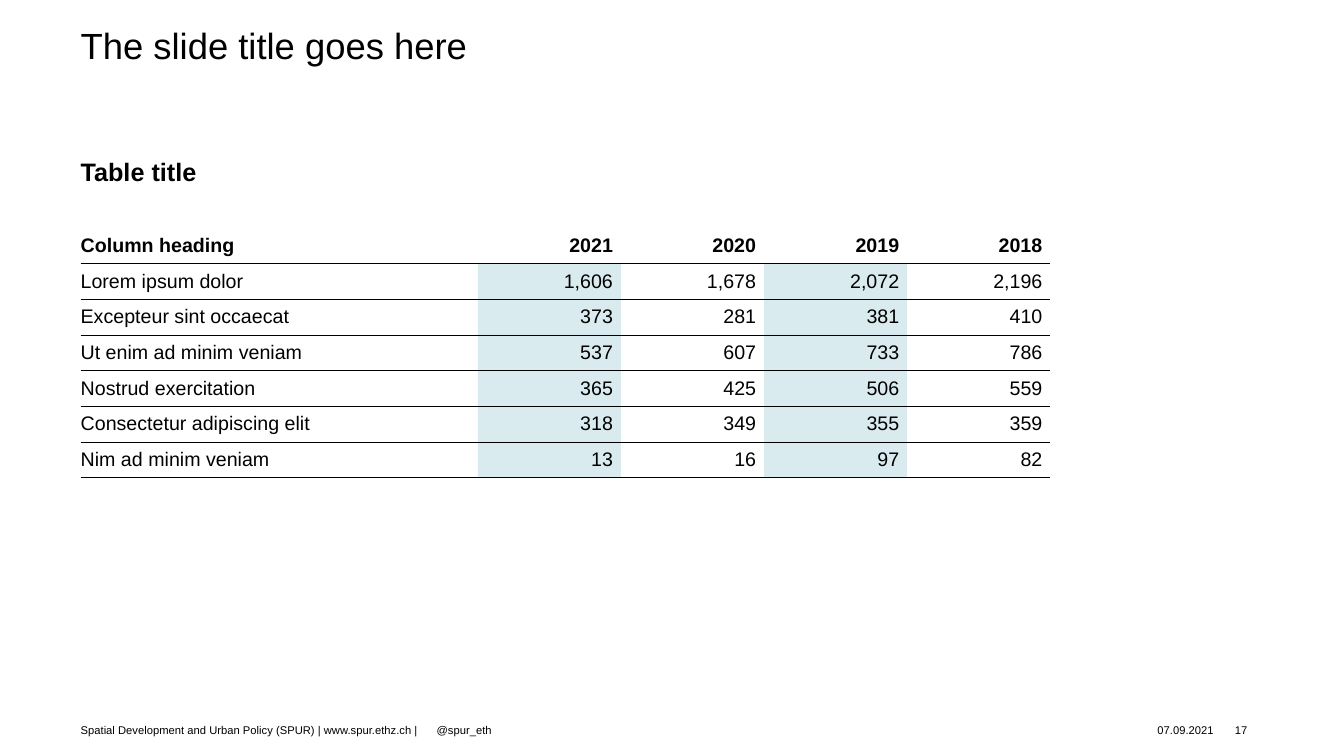
"""Build a slide with a titled five-column table and a footer."""
from lxml import etree
from pptx import Presentation
from pptx.dml.color import RGBColor
from pptx.enum.text import MSO_ANCHOR, PP_ALIGN
from pptx.oxml.ns import qn
from pptx.util import Inches, Pt

LEFT, CENTER, RIGHT = PP_ALIGN.LEFT, PP_ALIGN.CENTER, PP_ALIGN.RIGHT
MIDDLE = MSO_ANCHOR.MIDDLE
BLACK = RGBColor(0x00, 0x00, 0x00)
WHITE = RGBColor(0xFF, 0xFF, 0xFF)
TEAL = RGBColor(0x00, 0x7A, 0x96)
FONT = "Arial"

TITLE = "The slide title goes here"
TABLE_TITLE = "Table title"
ROWS = [
    ("Column heading", "2021", "2020", "2019", "2018"),
    ("Lorem ipsum dolor", "1,606", "1,678", "2,072", "2,196"),
    ("Excepteur sint occaecat", "373", "281", "381", "410"),
    ("Ut enim ad minim veniam", "537", "607", "733", "786"),
    ("Nostrud exercitation", "365", "425", "506", "559"),
    ("Consectetur adipiscing elit", "318", "349", "355", "359"),
    ("Nim ad minim veniam", "13", "16", "97", "82"),
]
FOOTER = "Spatial Development and Urban Policy (SPUR) | www.spur.ethz.ch |\t@spur_eth"
DATE = "07.09.2021"
PAGE = "17"

MARGIN = 0.8
CONTENT_W = 11.73
FOOTER_TOP, FOOTER_H = 7.13, 0.24
FOOTER_INSETS = (0, 0.05, 0.1, 0.05)
HANDLE_TAB = 3.53
TABLE_TOP, TABLE_H = 2.26, 2.48
COL_WIDTHS = [3.94] + [1.42] * 4
SHADED_COLS = (1, 3)
SHADE_ALPHA = 15
HEAD_LINE, ROW_LINE = 1, 0.5


def style(p, size, bold=False, align=LEFT):
    p.alignment = align
    for r in p.runs:
        r.font.name = FONT
        r.font.size = Pt(size)
        r.font.bold = bold
        r.font.color.rgb = BLACK


def set_margins(frame, insets):
    left, top, right, bottom = insets
    frame.margin_left, frame.margin_top = Inches(left), Inches(top)
    frame.margin_right, frame.margin_bottom = Inches(right), Inches(bottom)


def add_text(s, box, text, size, bold=False, align=LEFT, insets=(0, 0, 0, 0)):
    tf = s.shapes.add_textbox(*map(Inches, box)).text_frame
    tf.word_wrap = True
    set_margins(tf, insets)
    p = tf.paragraphs[0]
    p.text = text
    style(p, size, bold, align)
    return p


def add_tab_stop(p, position):
    tabs = etree.SubElement(p._p.get_or_add_pPr(), qn("a:tabLst"))
    etree.SubElement(tabs, qn("a:tab"), pos=str(Inches(position)), algn="l")


def add_border(cell, side, width):
    ln = etree.SubElement(cell._tc.get_or_add_tcPr(), qn(f"a:ln{side}"), w=str(Pt(width)))
    if width:
        fill = etree.SubElement(ln, qn("a:solidFill"))
        etree.SubElement(fill, qn("a:srgbClr"), val=str(BLACK))
    else:
        etree.SubElement(ln, qn("a:noFill"))


def fill_cell(cell, row, col):
    if row == 0:
        cell.fill.background()
        return
    cell.fill.solid()
    cell.fill.fore_color.rgb = TEAL if col in SHADED_COLS else WHITE
    if col in SHADED_COLS:
        color = cell._tc.tcPr.find(".//" + qn("a:solidFill") + "/" + qn("a:srgbClr") + f"[@val='{TEAL}']")
        etree.SubElement(color, qn("a:alpha"), val=str(SHADE_ALPHA * 1000))


def add_data_table(s):
    box = (MARGIN, TABLE_TOP, sum(COL_WIDTHS), TABLE_H)
    table = s.shapes.add_table(len(ROWS), len(COL_WIDTHS), *map(Inches, box)).table
    table.first_row = table.horz_banding = False
    for column, width in zip(table.columns, COL_WIDTHS):
        column.width = Inches(width)
    lines = [0, HEAD_LINE] + [ROW_LINE] * (len(ROWS) - 1)
    for i, values in enumerate(ROWS):
        for j, value in enumerate(values):
            cell = table.cell(i, j)
            cell.vertical_anchor = MIDDLE
            set_margins(cell, (0, 0, 0.08, 0))
            p = cell.text_frame.paragraphs[0]
            p.text = value
            style(p, 14, i == 0, RIGHT if j else LEFT)
            for side, width in zip("LRTB", (0, 0, lines[i], lines[i + 1])):
                add_border(cell, side, width)
            fill_cell(cell, i, j)


def main():
    prs = Presentation()
    prs.slide_width, prs.slide_height = Inches(13.33), Inches(7.5)
    s = prs.slides.add_slide(prs.slide_layouts[6])

    for left, width, text, align in (
        (MARGIN, 5.68, FOOTER, LEFT),
        (11.48, 0.94, DATE, LEFT),
        (12.18, 0.36, PAGE, CENTER),
    ):
        p = add_text(s, (left, FOOTER_TOP, width, FOOTER_H), text, 8, align=align, insets=FOOTER_INSETS)
        if "\t" in text:
            add_tab_stop(p, HANDLE_TAB)

    title = add_text(s, (MARGIN, 0.28, CONTENT_W, 0.98), TITLE, 26)
    title.line_spacing = 0.9
    add_text(s, (MARGIN, 1.55, CONTENT_W, 0.43), TABLE_TITLE, 18, bold=True)
    add_data_table(s)
    prs.save("out.pptx")


if __name__ == "__main__":
    main()
